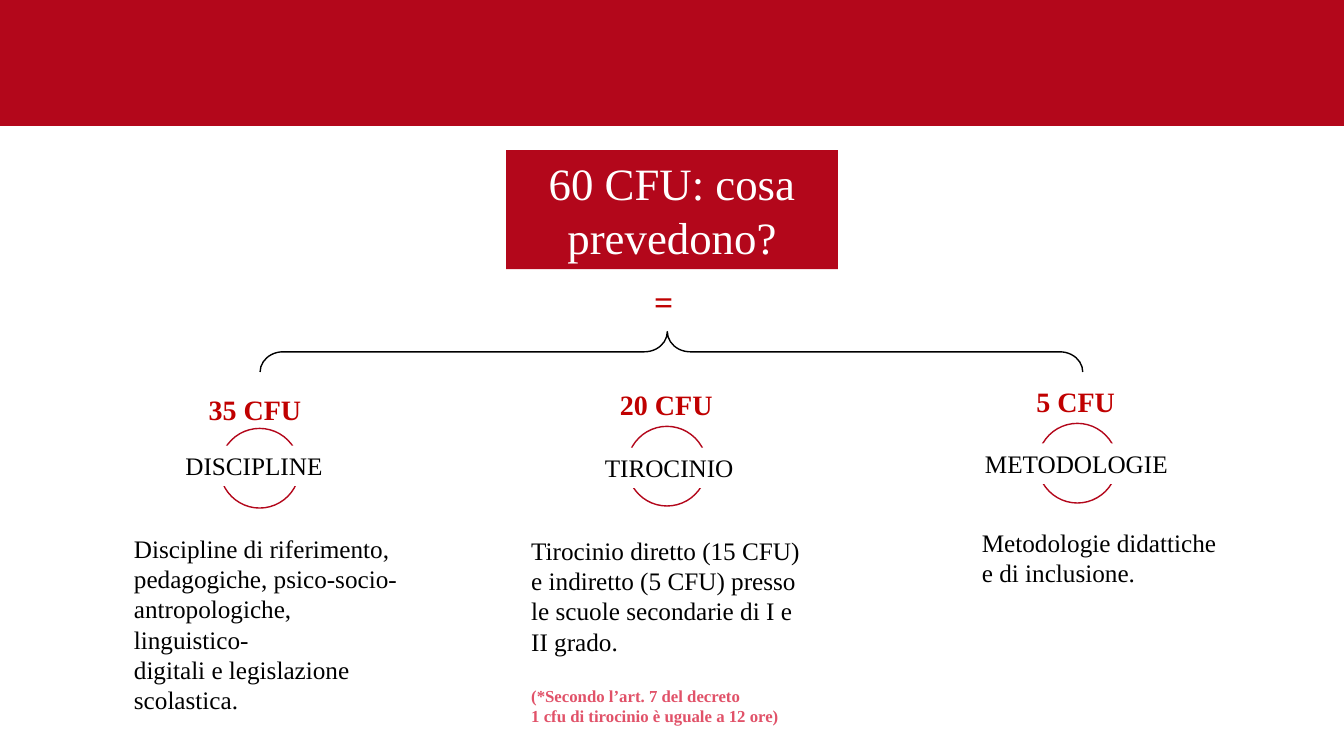
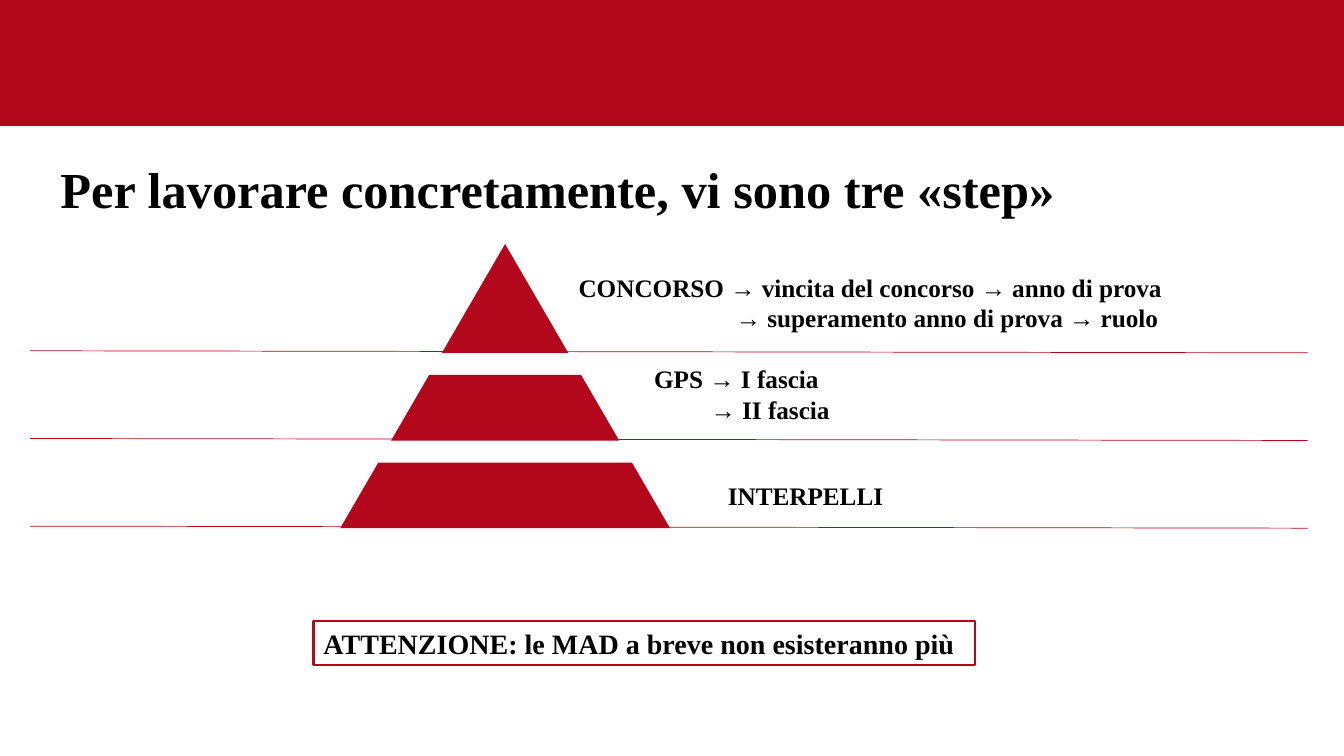
import pptx
import pptx.dml.color
import pptx.enum.shapes
import pptx.enum.text
import pptx.oxml.ns
import pptx.util
from lxml import etree

Inches = pptx.util.Inches
Pt = pptx.util.Pt
SHAPE = pptx.enum.shapes.MSO_SHAPE
ALIGN = pptx.enum.text.PP_ALIGN
COLORS = {name: pptx.dml.color.RGBColor.from_string(value) for name, value in {
    "brand": "B3071B",
    "accent": "C00000",
    "note": "E15269",
    "ink": "000000",
    "paper": "FFFFFF",
}.items()}
FONT = "Times New Roman"


def style_shape(shape, fill=None, line=None, width=1):
    shape.shadow.inherit = False
    if fill:
        shape.fill.solid()
        shape.fill.fore_color.rgb = COLORS[fill]
    else:
        shape.fill.background()
    if line:
        shape.line.color.rgb = COLORS[line]
        shape.line.width = Pt(width)
    else:
        shape.line.fill.background()


def write_text(shape, text, size, color="ink", bold=False, align=ALIGN.LEFT):
    frame = shape.text_frame
    frame.text = text
    frame.word_wrap = True
    frame.auto_size = pptx.enum.text.MSO_AUTO_SIZE.NONE
    for paragraph in frame.paragraphs:
        paragraph.alignment = align
        for run in paragraph.runs:
            run.font.name = FONT
            run.font.size = Pt(size)
            run.font.bold = bold
            run.font.color.rgb = COLORS[color]
    return frame.paragraphs


prs = pptx.Presentation()
prs.slide_width = Inches(13.33)
prs.slide_height = Inches(7.5)
title_only = prs.slide_layouts[5]

# Slide 1: what the 60 CFU consist of
slide = prs.slides.add_slide(title_only)

# The red band belongs to the master, so every slide shows it
band = slide.shapes.add_shape(SHAPE.RECTANGLE, 0, 0, prs.slide_width, Inches(1.25))
style_shape(band, fill="brand")
prs.slide_master.shapes._spTree.insert(2, band._element)

title = slide.shapes.title
title.left, title.top = Inches(5.02), Inches(1.49)
title.width, title.height = Inches(3.29), Inches(1.18)
title.fill.solid()
title.fill.fore_color.rgb = COLORS["brand"]
write_text(title, "60 CFU: cosa prevedono?", 32, "paper", align=ALIGN.CENTER)

# Equals sign and brace
equals = slide.shapes.add_textbox(Inches(6.39), Inches(2.74), Inches(0.4), Inches(0.5))
write_text(equals, "=", 24, "accent", bold=True)
brace = slide.shapes.add_shape(
    SHAPE.RIGHT_BRACE, Inches(6.46), Inches(-0.59), Inches(0.4), Inches(8.16))
brace.rotation = 270
brace.adjustments[0] = 0.57
brace.adjustments[1] = 0.495
style_shape(brace, line="ink")

# Three areas: credits, ring, label and description, each with its place
areas = [
    (("35 CFU", 1.97, 3.84), (2.18, 4.25), ("DISCIPLINE", 1.74, 4.42, 1.76),
     ("Discipline di riferimento, pedagogiche, psico-socio-antropologiche, "
      "linguistico-\ndigitali e legislazione scolastica.", 1.23, 5.24, 2.89, 1.92)),
    (("20 CFU", 6.05, 3.8), (6.22, 4.23), ("TIROCINIO", 5.9, 4.44, 1.76),
     ("Tirocinio diretto (15 CFU) e indiretto (5 CFU) presso le scuole "
      "secondarie di I e II grado.\n(*Secondo l’art. 7 del decreto\n"
      "1 cfu di tirocinio è uguale a 12 ore)", 5.17, 5.26, 2.89, 2.1)),
    (("5 CFU", 10.18, 3.77), (10.29, 4.2), ("METODOLOGIE", 9.67, 4.4, 2.53),
     ("Metodologie didattiche e di inclusione.", 9.64, 5.18, 2.53, 0.71)),
]
for credit_data, (ring_x, ring_y), label_data, description_data in areas:
    text, x, y = credit_data
    credits = slide.shapes.add_textbox(Inches(x), Inches(y), Inches(1.22), Inches(0.44))
    write_text(credits, text, 20, "accent", bold=True)

    ring = slide.shapes.add_shape(
        SHAPE.OVAL, Inches(ring_x), Inches(ring_y), Inches(0.79), Inches(0.79))
    style_shape(ring, line="brand")

    text, x, y, width = label_data
    label = slide.shapes.add_shape(
        SHAPE.RECTANGLE, Inches(x), Inches(y), Inches(width), Inches(0.4))
    style_shape(label, fill="paper")
    write_text(label, text, 18)

    text, x, y, width, height = description_data
    description = slide.shapes.add_textbox(
        Inches(x), Inches(y), Inches(width), Inches(height))
    for paragraph in write_text(description, text, 18):
        # Small print on the decree
        if paragraph.text.startswith(("(*", "1 cfu")):
            run = paragraph.runs[0]
            run.font.size = Pt(12)
            run.font.bold = True
            run.font.color.rgb = COLORS["note"]
        if paragraph.text.startswith("(*"):
            paragraph.space_before = Pt(21)

# Slide 2: the three steps
slide = prs.slides.add_slide(title_only)
title = slide.shapes.title
title.left, title.top = Inches(0.5), Inches(1.26)
title.width, title.height = Inches(12.83), Inches(1.3)
title_lines = write_text(
    title, "Per lavorare concretamente, vi sono tre «step»", 36, bold=True)
title_lines[0].line_spacing = 0.9

# Pyramid: every level follows the same slope from the apex
APEX_X, APEX_Y, SLOPE = 5.01, 2.42, 0.58
for top, base in [(2.42, 3.5), (3.72, 4.37), (4.59, 5.24)]:
    half_top = (top - APEX_Y) * SLOPE
    half_base = (base - APEX_Y) * SLOPE
    outline = slide.shapes.build_freeform(Inches(APEX_X + half_top), Inches(top))
    outline.add_line_segments([
        (Inches(APEX_X - half_top), Inches(top)),
        (Inches(APEX_X - half_base), Inches(base)),
        (Inches(APEX_X + half_base), Inches(base)),
    ], close=True)
    level = outline.convert_to_shape()
    style_shape(level, fill="brand")

    rule = slide.shapes.add_connector(
        pptx.enum.shapes.MSO_CONNECTOR.STRAIGHT,
        Inches(0.3), Inches(base - 0.02), Inches(12.97), Inches(base))
    rule.line.color.rgb = COLORS["brand"]
    rule.line.width = Pt(0.5)
    etree.SubElement(rule._element.spPr, pptx.oxml.ns.qn("a:effectLst"))

# Step texts, the second line indented under the first arrow
steps = [
    ("CONCORSO → vincita del concorso → anno di prova\n"
     "→ superamento anno di prova → ruolo", 5.64, 2.65, 6.2, 0.71, 1.56),
    ("GPS → I fascia\n→ II fascia", 6.39, 3.56, 2.03, 0.71, 0.56),
    ("INTERPELLI", 7.12, 4.72, 1.8, 0.4, 0),
]
for text, x, y, width, height, indent in steps:
    step = slide.shapes.add_textbox(Inches(x), Inches(y), Inches(width), Inches(height))
    for paragraph in write_text(step, text, 18, bold=True)[1:]:
        paragraph._p.get_or_add_pPr().set("marL", str(Inches(indent)))

# Warning
warning = slide.shapes.add_shape(
    SHAPE.RECTANGLE, Inches(3.11), Inches(6.16), Inches(6.56), Inches(0.44))
style_shape(warning, line="brand", width=1.5)
write_text(warning, "ATTENZIONE: le MAD a breve non esisteranno più", 20, bold=True)

prs.save("out.pptx")
